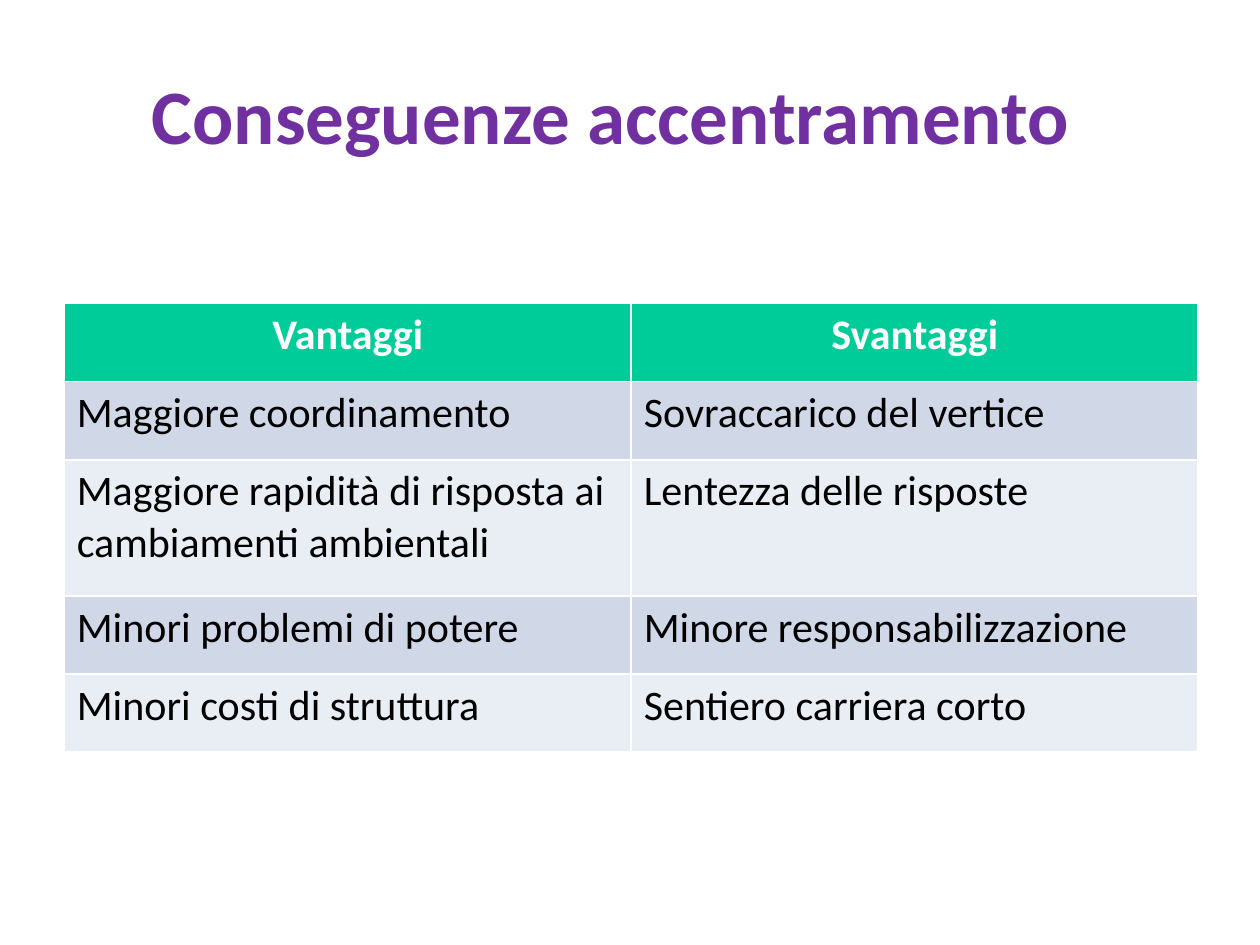
from pptx import Presentation
from pptx.dml.color import RGBColor
from pptx.enum.text import MSO_ANCHOR, PP_ALIGN
from pptx.util import Inches, Pt

PURPLE = RGBColor(0x70, 0x30, 0xA0)
GREEN = RGBColor(0x00, 0xCC, 0x99)
BAND_DARK = RGBColor(0xD0, 0xD8, 0xE8)
BAND_LIGHT = RGBColor(0xE9, 0xED, 0xF4)
WHITE = RGBColor(0xFF, 0xFF, 0xFF)
BLACK = RGBColor(0x00, 0x00, 0x00)

ROWS = [
    ("Vantaggi", "Svantaggi"),
    ("Maggiore coordinamento", "Sovraccarico del vertice"),
    ("Maggiore rapidità di risposta ai cambiamenti ambientali", "Lentezza delle risposte"),
    ("Minori problemi di potere", "Minore responsabilizzazione"),
    ("Minori costi di struttura", "Sentiero carriera corto"),
]
ROW_HEIGHTS = [0.62, 0.62, 1.08, 0.62, 0.62]


def add_span(para, text, size, color, bold):
    span = para.add_run()
    span.text = text
    span.font.name = "Calibri"
    span.font.size = Pt(size)
    span.font.bold = bold
    span.font.color.rgb = color


deck = Presentation()
deck.slide_width, deck.slide_height = Inches(10), Inches(7.5)
page = deck.slides.add_slide(deck.slide_layouts[5])

title = page.shapes.title
title.left, title.top = Inches(0.35), Inches(0.28)
title.width, title.height = Inches(9), Inches(1.25)
title.text_frame.vertical_anchor = MSO_ANCHOR.MIDDLE
title_para = title.text_frame.paragraphs[0]
title_para.alignment = PP_ALIGN.CENTER
add_span(title_para, "Conseguenze accentramento", 44, PURPLE, True)

# The default table style supplies the white borders and the thick header rule.
table = page.shapes.add_table(
    len(ROWS), 2, Inches(0.51), Inches(2.41), Inches(9), Inches(sum(ROW_HEIGHTS))
).table

for row_index, (texts, height) in enumerate(zip(ROWS, ROW_HEIGHTS)):
    table.rows[row_index].height = Inches(height)
    is_header = row_index == 0
    band = BAND_DARK if row_index % 2 else BAND_LIGHT
    for column_index, text in enumerate(texts):
        cell = table.cell(row_index, column_index)
        cell.fill.solid()
        cell.fill.fore_color.rgb = GREEN if is_header else band
        para = cell.text_frame.paragraphs[0]
        para.alignment = PP_ALIGN.CENTER if is_header else PP_ALIGN.LEFT
        add_span(para, text, 24, WHITE if is_header else BLACK, is_header)

deck.save("out.pptx")
